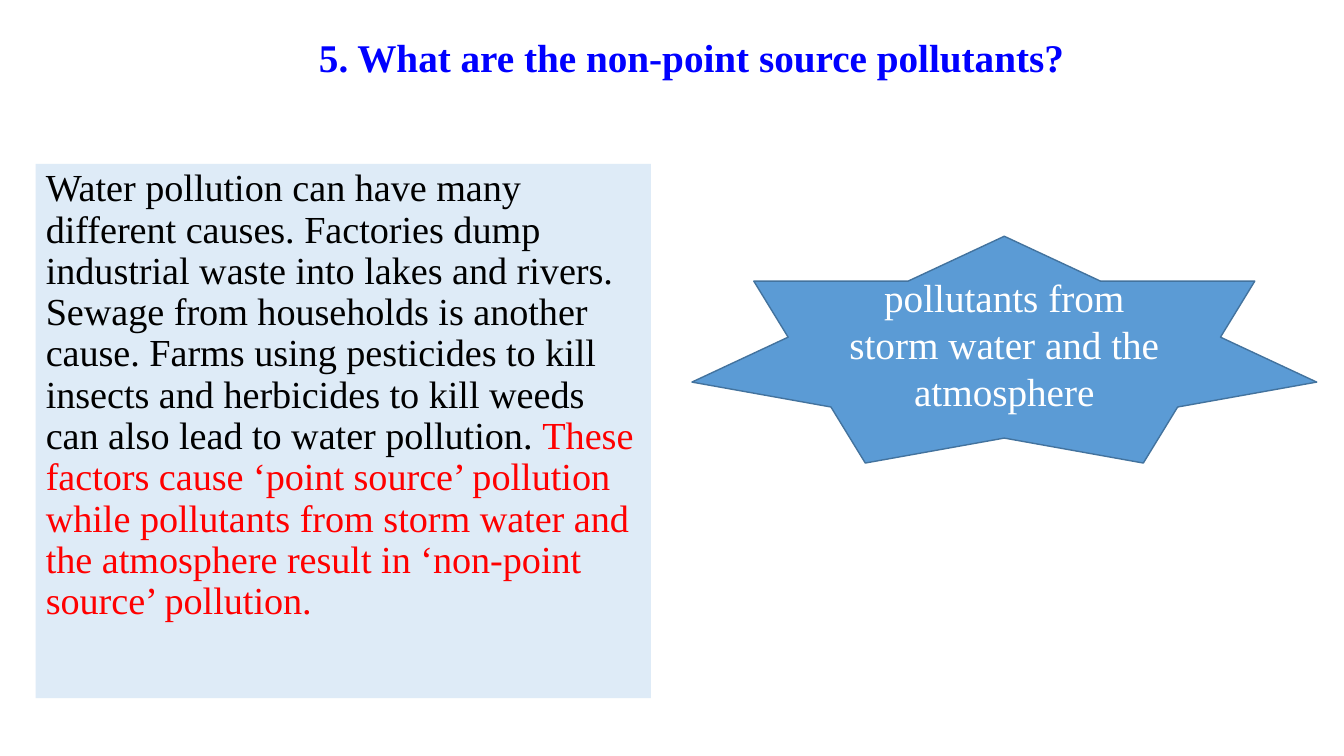
from lxml.etree import SubElement
from pptx import Presentation
from pptx.dml.color import RGBColor
from pptx.enum.shapes import MSO_SHAPE as Shape
from pptx.enum.text import MSO_ANCHOR as Anchor, MSO_AUTO_SIZE as AutoSize, PP_ALIGN as Align
from pptx.oxml.ns import qn
from pptx.util import Emu, Pt

FONT = "Times New Roman"
CAUSES = (
    "Water pollution can have many different causes. Factories dump industrial waste "
    "into lakes and rivers. Sewage from households is another cause. Farms using "
    "pesticides to kill insects and herbicides to kill weeds can also lead to water pollution. "
)
SOURCES = (
    "These factors cause ‘point source’ pollution while pollutants from storm water "
    "and the atmosphere result in ‘non-point source’ pollution."
)


def px(count):
    return Emu(count * 9525)


def color(value):
    return RGBColor.from_string(value)


def place(box, left, top, width, height):
    box.left, box.top, box.width, box.height = map(px, (left, top, width, height))


def paint(box, fill):
    box.fill.solid()
    box.fill.fore_color.rgb = color(fill)


def style_frame(frame, anchor):
    frame.word_wrap = True
    frame.auto_size = AutoSize.NONE
    frame.vertical_anchor = anchor


def style_para(para, size, align, ink=None, bold=False):
    para.alignment = align
    para.font.name = FONT
    para.font.size = Pt(size)
    para.font.bold = bold
    if ink:
        para.font.color.rgb = color(ink)


def write_title(box, text):
    place(box, 280, 27, 757, 55)
    style_frame(box.text_frame, Anchor.TOP)
    box.text_frame.text = text
    style_para(box.text_frame.paragraphs[0], 28, Align.CENTER, "0000FF", bold=True)


def write_passage(box, parts):
    place(box, 34, 156, 586, 509)
    paint(box, "DEEBF7")
    style_frame(box.text_frame, Anchor.TOP)
    para = box.text_frame.paragraphs[0]
    style_para(para, 27.3, Align.LEFT)
    para.line_spacing = 0.9
    para.space_before = Pt(10)
    settings = para._p.get_or_add_pPr()
    settings.set("marL", "0")
    settings.set("indent", "0")
    bullet = SubElement(settings, qn("a:buNone"))
    settings.find(qn("a:defRPr")).addprevious(bullet)
    for text, ink in parts:
        span = para.add_run()
        span.text = text
        span.font.color.rgb = color(ink)


def add_star(page, text):
    star = page.shapes.add_shape(Shape.STAR_7_POINT, px(659), px(225), px(595), px(216))
    star.shadow.inherit = False
    paint(star, "5B9BD5")
    star.line.color.rgb = color("43739E")
    star.line.width = Pt(1)
    style_frame(star.text_frame, Anchor.MIDDLE)
    star.text_frame.text = text
    style_para(star.text_frame.paragraphs[0], 28, Align.CENTER, "FFFFFF")


def main():
    deck = Presentation()
    deck.slide_width, deck.slide_height = px(1280), px(720)
    page = deck.slides.add_slide(deck.slide_layouts[1])
    write_title(page.shapes.title, "5. What are the non-point source pollutants?")
    write_passage(page.placeholders[1], [(CAUSES, "000000"), (SOURCES, "FF0000")])
    add_star(page, "pollutants from storm water and the atmosphere")
    deck.save("out.pptx")


if __name__ == "__main__":
    main()
